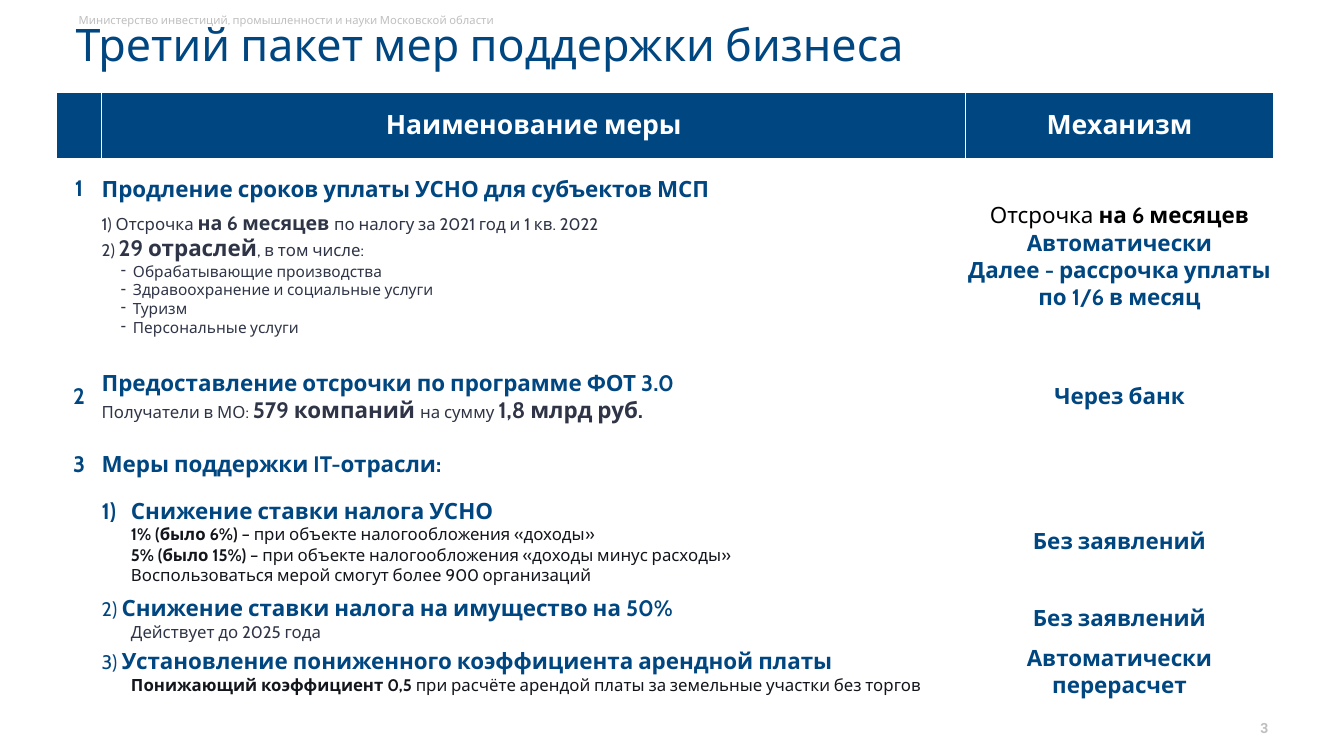
"""Build the slide on the third package of business support measures."""
import pptx
import pptx.util
import pptx.dml.color
import pptx.enum.text
import pptx.oxml.ns
import lxml.etree

Inches, Pt = pptx.util.Inches, pptx.util.Pt
ALIGN = pptx.enum.text.PP_ALIGN
ANCHOR = pptx.enum.text.MSO_ANCHOR
COLORS = {"navy": "004680", "white": "FFFFFF", "gray": "BFBFBF",
          "slate": "2F3546", "ink": "13151C", "black": "000000"}
STYLES = {
    "caption": (8, "gray", False, "Cabin"),
    "title": (32, "navy", False, "Cabin"),
    "page": (10, "gray", True, "Roboto"),
    "header": (19, "white", True, "Cabin"),
    "measure": (16, "navy", True, "Cabin"),
    "number": (14, "navy", False, "Cabin"),
    "plain": (12, "slate", False, "Cabin"),
    "stress": (14, "slate", True, "Cabin"),
    "figure": (16, "slate", True, "Cabin"),
    "item": (11, "slate", False, "Cabin"),
    "detail": (12, "ink", False, "Cabin"),
    "rate": (12, "ink", True, "Cabin"),
    "term": (16, "black", False, "Cabin"),
    "period": (16, "black", True, "Cabin"),
}
LAYOUTS = {
    "left": {"alignment": ALIGN.LEFT},
    "center": {"alignment": ALIGN.CENTER},
    "right": {"alignment": ALIGN.RIGHT},
    "spaced": {"alignment": ALIGN.LEFT, "space_before": Pt(6)},
    "tight": {"alignment": ALIGN.LEFT, "line_spacing": 0.9, "space_before": Pt(0)},
}
INDENTS = {
    "dash": (0.31, -0.12, "a:buChar", {"char": "-"}),
    "ordinal": (0.29, -0.29, "a:buAutoNum", {"type": "arabicParenR"}),
    "inset": (0, 0.29, "a:buNone", {}),
}

deck = pptx.Presentation()
deck.slide_width, deck.slide_height = Inches(13.33), Inches(7.5)
across, down = deck.slide_width / 100, deck.slide_height / 100
slide = deck.slides.add_slide(deck.slide_layouts[5])


def percent_box(left, top, width, height):
    """Turn percentages of the slide into lengths."""
    return [int(left * across), int(top * down), int(width * across), int(height * down)]


def write(frame, paragraphs):
    """Fill a text frame with (layout, (text, style), ...) paragraphs."""
    for index, (layout, *spans) in enumerate(paragraphs):
        para = frame.add_paragraph() if index else frame.paragraphs[0]
        for name, value in LAYOUTS.get(layout, LAYOUTS["left"]).items():
            setattr(para, name, value)
        if layout in INDENTS:
            margin, indent, bullet, values = INDENTS[layout]
            properties = para._p.get_or_add_pPr()
            properties.set("marL", str(Inches(margin)))
            properties.set("indent", str(Inches(indent)))
            lxml.etree.SubElement(properties, pptx.oxml.ns.qn(bullet), values)
        for text, style in spans:
            span = para.add_run()
            span.text = text
            size, color, bold, face = STYLES[style]
            for name, value in {"size": Pt(size), "bold": bold, "name": face}.items():
                setattr(span.font, name, value)
            span.font.color.rgb = pptx.dml.color.RGBColor.from_string(COLORS[color])


caption = slide.shapes.add_textbox(*percent_box(5.48, 1.07, 42.39, 3.2))
page = slide.shapes.add_textbox(*percent_box(92.42, 94.53, 2.33, 3.6))
title = slide.shapes.title
title.left, title.top, title.width, title.height = percent_box(5.25, 1.33, 89.57, 19.33)
labels = [
    (caption, "left", "caption", ANCHOR.TOP, 0.05, True,
     "Министерство инвестиций, промышленности и науки Московской области"),
    (title, "tight", "title", ANCHOR.TOP, 0.13, True, "Третий пакет мер поддержки бизнеса"),
    (page, "right", "page", ANCHOR.MIDDLE, 0.05, False, "3"),
]
for box, layout, style, anchor, top_margin, wrap, text in labels:
    frame_format = {
        "margin_left": Inches(0.05), "margin_right": Inches(0.05),
        "margin_top": Inches(top_margin), "margin_bottom": Inches(0.05),
        "vertical_anchor": anchor, "word_wrap": wrap,
        "auto_size": pptx.enum.text.MSO_AUTO_SIZE.NONE,
    }
    for name, value in frame_format.items():
        setattr(box.text_frame, name, value)
    write(box.text_frame, [(layout, (text, style))])

no_application = [("center", ("Без заявлений", "measure"))]
rows = [
    (8.67, [], [("center", ("Наименование меры", "header"))],
     [("center", ("Механизм", "header"))]),
    (26, [("center", ("1", "measure"))], [
        ("spaced", ("Продление сроков уплаты УСНО для субъектов МСП", "measure")),
        ("spaced", ("1) Отсрочка ", "plain"), ("на 6 месяцев ", "stress"),
         ("по налогу за 2021 год и 1 кв. 2022", "plain")),
        ("left", ("2) ", "plain"), ("29 отраслей", "figure"), (", в том числе:", "plain")),
        ("dash", ("Обрабатывающие производства", "item")),
        ("dash", ("Здравоохранение и социальные услуги", "item")),
        ("dash", ("Туризм", "item")),
        ("dash", ("Персональные услуги", "item")),
    ], [
        ("center", ("Отсрочка ", "term"), ("на 6 месяцев ", "period"),
         ("Автоматически", "measure")),
        ("center", ("Далее - рассрочка уплаты по 1/6 в месяц", "measure")),
    ]),
    (11.07, [("center", ("2", "measure"))], [
        ("left", ("Предоставление отсрочки по программе ФОТ 3.0", "measure")),
        ("left", ("Получатели в МО: ", "plain"), ("579 компаний ", "figure"),
         ("на сумму ", "plain"), ("1,8 млрд руб.", "figure")),
    ], [("center", ("Через банк", "measure"))]),
    (6.93, [("center", ("3", "measure"))],
     [("left", ("Меры поддержки IT-отрасли:", "measure"))], []),
    (13.47, [], [
        ("ordinal", ("Снижение ставки налога УСНО", "measure")),
        ("inset", ("1% (было 6%) ", "rate"),
         ("– при объекте налогообложения «доходы»", "detail")),
        ("inset", ("5% (было 15%) ", "rate"),
         ("– при объекте налогообложения «доходы минус расходы»", "detail")),
        ("inset", ("Воспользоваться мерой смогут более 900 организаций", "detail")),
    ], no_application),
    (6.93, [], [
        ("left", ("2) ", "number"), ("Снижение ставки налога на имущество на 50%", "measure")),
        ("inset", ("Действует до 2025 года", "plain")),
    ], no_application),
    (6.93, [], [
        ("left", ("3) ", "number"),
         ("Установление пониженного коэффициента арендной платы", "measure")),
        ("inset", ("Понижающий коэффициент 0,5 ", "rate"),
         ("при расчёте арендой платы за земельные участки без торгов", "detail")),
    ], [("center", ("Автоматически", "measure")), ("center", ("перерасчет", "measure"))]),
]
column_shares = [3.37, 64.29, 22.88]
table_box = percent_box(4.2, 12.27, sum(column_shares), sum(row[0] for row in rows))
table = slide.shapes.add_table(len(rows), len(column_shares), *table_box).table
table.horz_banding = False
for column, share in zip(table.columns, column_shares):
    column.width = int(share * across)

for row_index, (share, *contents) in enumerate(rows):
    table.rows[row_index].height = int(share * down)
    for column_index, paragraphs in enumerate(contents):
        cell = table.cell(row_index, column_index)
        margin = Inches(0 if row_index else 0.07)
        for side in ("left", "top", "right", "bottom"):
            setattr(cell, f"margin_{side}", margin)
        cell.vertical_anchor = ANCHOR.MIDDLE
        for edge in ("a:lnL", "a:lnR", "a:lnT", "a:lnB"):
            line = lxml.etree.SubElement(
                cell._tc.get_or_add_tcPr(), pptx.oxml.ns.qn(edge), {"w": str(Pt(1))})
            paint = lxml.etree.SubElement(line, pptx.oxml.ns.qn("a:solidFill"))
            lxml.etree.SubElement(
                paint, pptx.oxml.ns.qn("a:srgbClr"), {"val": COLORS["white"]})
        cell.fill.solid()
        cell.fill.fore_color.rgb = pptx.dml.color.RGBColor.from_string(
            COLORS["white" if row_index else "navy"])
        write(cell.text_frame, paragraphs)

first_number = table.cell(1, 0)
first_number.vertical_anchor = ANCHOR.TOP
first_number.margin_top = Inches(0.17)

deck.save("out.pptx")
